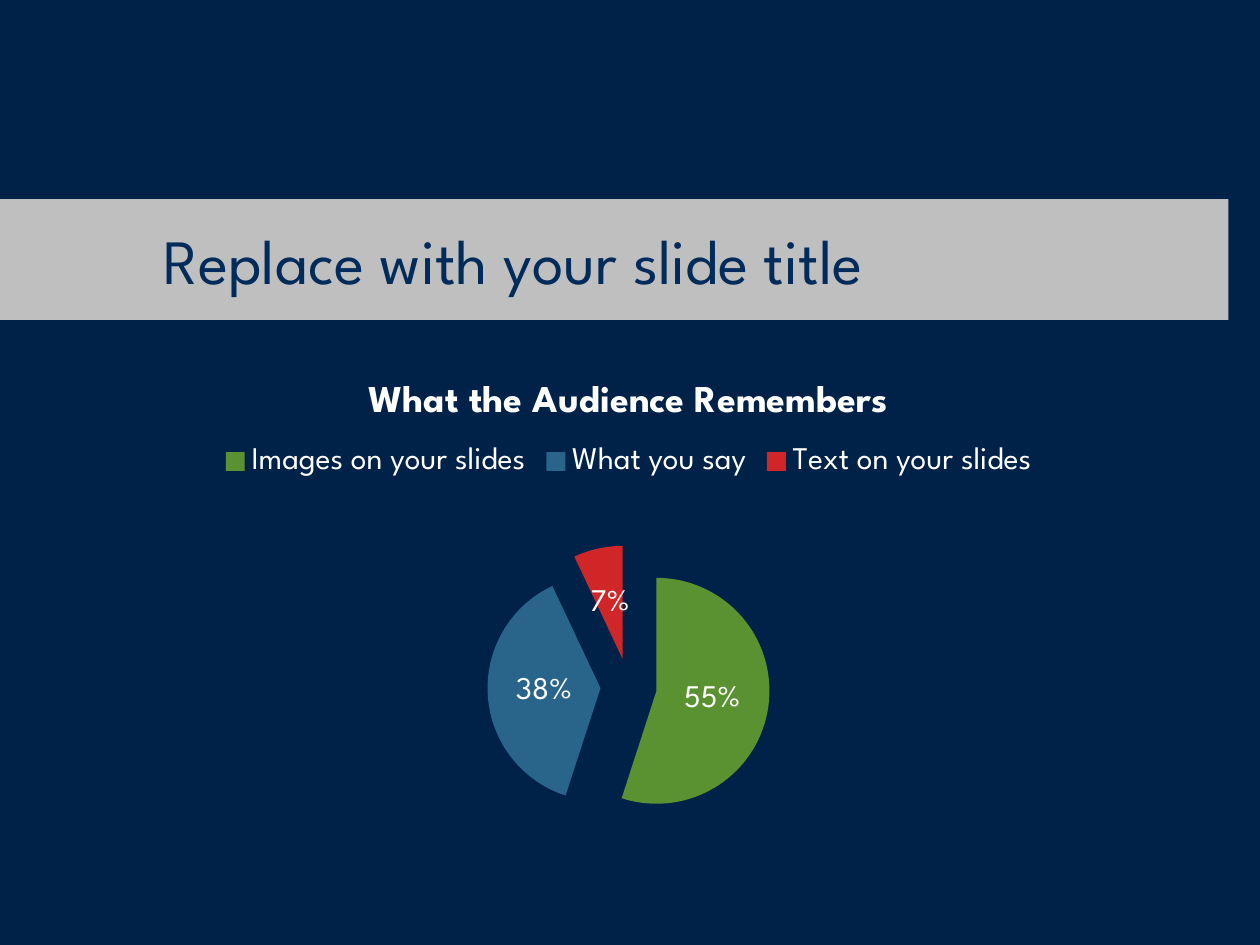
from lxml import etree
from pptx import Presentation
from pptx import util as u
from pptx.chart.data import CategoryChartData
from pptx.dml.color import RGBColor
from pptx.enum import chart as charts, text
from pptx.oxml.ns import qn

COLOURS = {"background": "002248", "band": "BFBFBF", "title": "002B5A", "chart text": "FFFFFF"}
FONT = "League Spartan"
HEADING = "What the Audience Remembers"
SLICES = [
    ("Images on your slides", 0.55, "5A9131"),
    ("What you say", 0.38, "29658B"),
    ("Text on your slides", 0.07, "D12627"),
]
PLOT = {"x": 0.084, "y": 0.371, "w": 0.832, "h": 0.559}
EXPLOSION = 25


def paint(fill, colour):
    """Give a fill one solid colour."""
    fill.solid()
    fill.fore_color.rgb = RGBColor.from_string(colour)


def style(font, size, colour, bold=False):
    """Set typeface, size, colour and weight."""
    font.name, font.size, font.bold = FONT, u.Pt(size), bold
    font.color.rgb = RGBColor.from_string(colour)


def place_title(slide, box):
    """Turn the title placeholder into the grey band."""
    shape = slide.shapes.title
    shape.left, shape.top, shape.width, shape.height = box
    paint(shape.fill, COLOURS["band"])
    frame = shape.text_frame
    frame.word_wrap = True
    frame.auto_size = text.MSO_AUTO_SIZE.NONE
    frame.vertical_anchor = text.MSO_ANCHOR.MIDDLE
    frame.margin_left, frame.margin_right = u.Inches(1.3), u.Inches(0.3)
    frame.margin_top = frame.margin_bottom = u.Inches(0.05)
    paragraph = frame.paragraphs[0]
    paragraph.alignment = text.PP_ALIGN.LEFT
    run = paragraph.add_run()
    run.text = "Replace with your slide title"
    style(run.font, 36, COLOURS["title"])


def set_plot_layout(chart):
    """Fix the inner plot area as shares of the chart."""
    area = chart._chartSpace.chart.plotArea
    for layout in area.findall(qn("c:layout")):
        area.remove(layout)
    layout = etree.Element(qn("c:layout"))
    manual = etree.SubElement(layout, qn("c:manualLayout"))
    settings = [("layoutTarget", "inner"), ("xMode", "edge"), ("yMode", "edge"), *PLOT.items()]
    for name, value in settings:
        etree.SubElement(manual, qn(f"c:{name}")).set("val", str(value))
    area.insert(0, layout)


def place_pie(slide, box):
    """Add the exploded pie with heading, legend and percentages."""
    data = CategoryChartData(number_format="0%")
    data.categories = [name for name, _, _ in SLICES]
    data.add_series(HEADING, [share for _, share, _ in SLICES])
    chart = slide.shapes.add_chart(charts.XL_CHART_TYPE.PIE, *box, data).chart
    style(chart.font, 18, COLOURS["chart text"])
    chart.has_title = True
    run = chart.chart_title.text_frame.paragraphs[0].add_run()
    run.text = HEADING
    style(run.font, 21.6, COLOURS["chart text"], bold=True)
    chart.has_legend = True
    chart.legend.position = charts.XL_LEGEND_POSITION.TOP
    chart.legend.include_in_layout = False
    style(chart.legend.font, 18, COLOURS["chart text"])
    set_plot_layout(chart)

    plot = chart.plots[0]
    plot.vary_by_categories = True
    series = plot.series[0]
    for index, (_, _, colour) in enumerate(SLICES):
        paint(series.points[index].format.fill, colour)
    explosion = etree.Element(qn("c:explosion"))
    explosion.set("val", str(EXPLOSION))
    series._element.find(qn("c:tx")).addnext(explosion)
    labels = series.data_labels
    labels.show_percentage, labels.show_value = True, False
    labels.number_format, labels.number_format_is_linked = "0%", False
    labels.position = charts.XL_LABEL_POSITION.CENTER
    style(labels.font, 18, COLOURS["chart text"])


def main():
    """Build and save the slide."""
    presentation = Presentation()
    presentation.slide_width, presentation.slide_height = u.Inches(10), u.Inches(7.5)
    slide = presentation.slides.add_slide(presentation.slide_layouts[5])
    paint(slide.background.fill, COLOURS["background"])
    place_title(slide, [u.Inches(n) for n in (0, 1.58, 9.75, 0.96)])
    place_pie(slide, [u.Inches(n) for n in (0.83, 2.84, 8.32, 4.01)])
    presentation.save("out.pptx")


if __name__ == "__main__":
    main()
